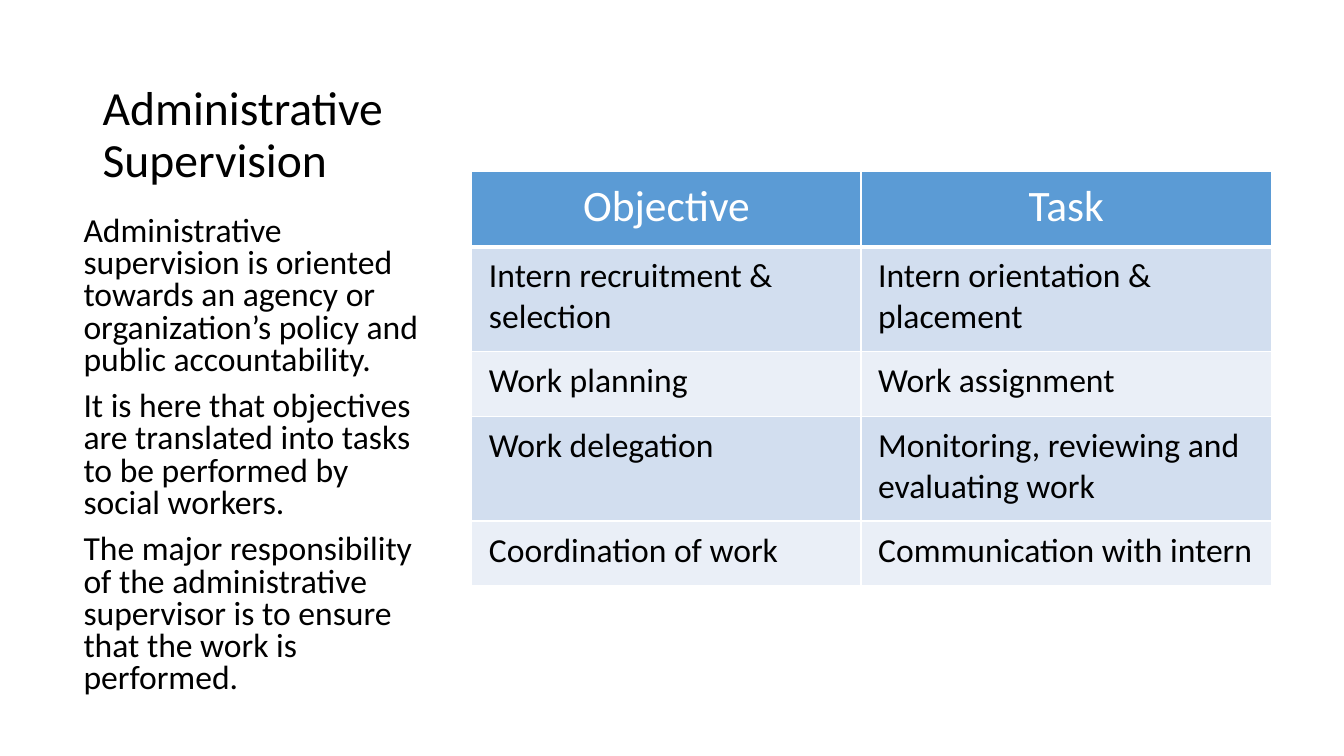
from dataclasses import dataclass

from lxml.etree import SubElement
from pptx import Presentation
from pptx.dml.color import RGBColor as RGB
from pptx.enum.text import MSO_ANCHOR as Anchor, PP_ALIGN as Align
from pptx.oxml.ns import qn
from pptx.util import Inches, Pt


@dataclass(frozen=True)
class Theme:
    font: str = "Calibri"
    black: str = "000000"
    white: str = "FFFFFF"
    header: str = "5B9BD5"
    bands: tuple = ("D2DEEF", "EAEFF7")
    title_size: int = 34
    header_size: int = 31
    body_size: int = 24


theme = Theme()


def add_text(paragraph, text, size, color):
    run = paragraph.add_run()
    run.text = text
    run.font.name = theme.font
    run.font.size = Pt(size)
    run.font.color.rgb = RGB.from_string(color)


def add_border(cell, side, points):
    """Draw one white cell border; side is L, R, T or B."""
    line = SubElement(cell._tc.get_or_add_tcPr(), qn(f"a:ln{side}"), w=str(Pt(points)))
    fill = SubElement(line, qn("a:solidFill"))
    SubElement(fill, qn("a:srgbClr"), val=theme.white)


prs = Presentation()
prs.slide_width = Inches(13.33)
prs.slide_height = Inches(7.5)
slide = prs.slides.add_slide(prs.slide_layouts[6])

# Heading
heading = slide.shapes.add_textbox(
    Inches(0.92), Inches(0.7), Inches(3.06), Inches(1.21)).text_frame
heading.word_wrap = True
heading.vertical_anchor = Anchor.BOTTOM
heading.paragraphs[0].line_spacing = 0.9
add_text(heading.paragraphs[0], "Administrative Supervision", theme.title_size, theme.black)

# Explanation
statements = [
    "Administrative supervision is oriented towards an agency or "
    "organization’s policy and public accountability.",
    "It is here that objectives are translated into tasks to be performed "
    "by social workers.",
    "The major responsibility of the administrative supervisor is to ensure "
    "that the work is performed.",
]
explanation = slide.shapes.add_textbox(
    Inches(0.73), Inches(2.1), Inches(3.65), Inches(4.9)).text_frame
explanation.word_wrap = True
for index, statement in enumerate(statements):
    paragraph = explanation.add_paragraph() if index else explanation.paragraphs[0]
    paragraph.line_spacing = 0.8
    if index:
        paragraph.space_before = Pt(10)
    add_text(paragraph, statement, theme.body_size, theme.black)

# Objectives and tasks
duties = [
    ("Objective", "Task"),
    ("Intern recruitment & selection", "Intern orientation & placement"),
    ("Work planning", "Work assignment"),
    ("Work delegation", "Monitoring, reviewing and evaluating work"),
    ("Coordination of work", "Communication with intern"),
]
column_widths = [3.86, 4.07]
row_heights = [0.75, 1.04, 0.64, 1.04, 0.64]
duty_table = slide.shapes.add_table(
    len(duties), len(column_widths), Inches(4.68), Inches(1.7),
    Inches(sum(column_widths)), Inches(sum(row_heights))).table
for column, width in zip(duty_table.columns, column_widths):
    column.width = Inches(width)

for r, (duty, height) in enumerate(zip(duties, row_heights)):
    duty_table.rows[r].height = Inches(height)
    is_header = r == 0
    for c, label in enumerate(duty):
        cell = duty_table.cell(r, c)
        cell.margin_left = cell.margin_right = Inches(0.17)
        cell.margin_top = cell.margin_bottom = Inches(0.09)
        for side in "LRTB":
            add_border(cell, side, 3 if is_header and side == "B" else 1)
        cell.fill.solid()
        paragraph = cell.text_frame.paragraphs[0]
        if is_header:
            cell.fill.fore_color.rgb = RGB.from_string(theme.header)
            paragraph.alignment = Align.CENTER
            add_text(paragraph, label, theme.header_size, theme.white)
        else:
            cell.fill.fore_color.rgb = RGB.from_string(theme.bands[(r - 1) % 2])
            add_text(paragraph, label, theme.body_size, theme.black)

prs.save("out.pptx")
